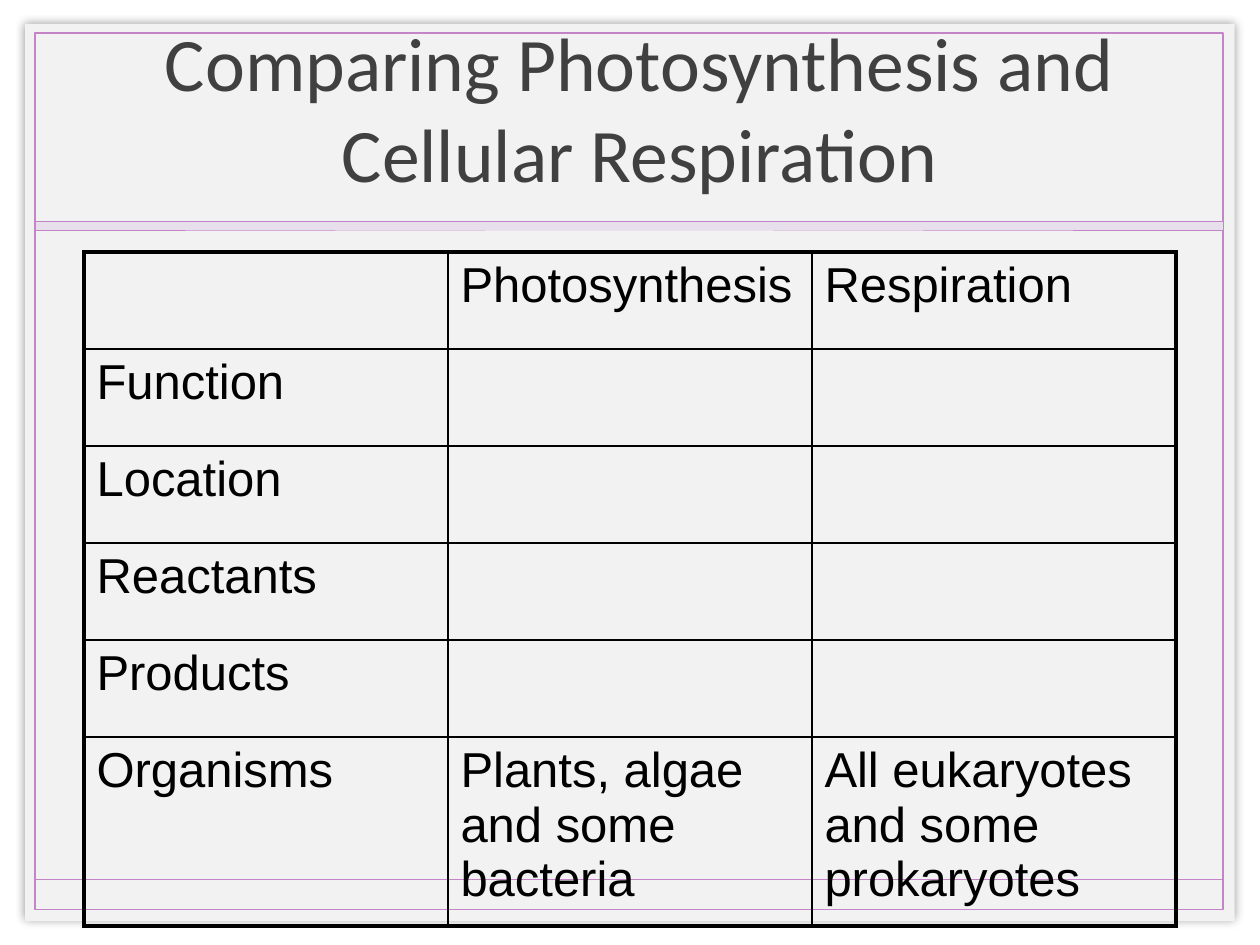
from lxml.etree import SubElement
from pptx import Presentation
from pptx.dml.color import RGBColor
from pptx.enum.shapes import MSO_CONNECTOR, MSO_SHAPE
from pptx.enum.text import MSO_ANCHOR, PP_ALIGN
from pptx.oxml import parse_xml
from pptx.oxml.ns import nsdecls, qn
from pptx.util import Pt

BLACK = RGBColor(0x00, 0x00, 0x00)
GREY = RGBColor(0x40, 0x40, 0x40)
PAPER = RGBColor(0xF2, 0xF2, 0xF2)
PURPLE = RGBColor(0xC3, 0x84, 0xC8)
LILAC = RGBColor(0xE7, 0xDF, 0xEB)

LEFT, WIDTH = 20.16, 678.96
COL_WIDTH = 208
ROW_HEIGHTS = [55.44] * 5 + [108]
ROWS = [
    ["", "Photosynthesis", "Respiration"],
    ["Function", "", ""],
    ["Location", "", ""],
    ["Reactants", "", ""],
    ["Products", "", ""],
    ["Organisms", "Plants, algae and some bacteria",
     "All eukaryotes and some prokaryotes"],
]


def write(tf, text, size, font, color, align=PP_ALIGN.LEFT, anchor=None):
    tf.word_wrap = True
    if anchor is not None:
        tf.vertical_anchor = anchor
    p = tf.paragraphs[0]
    p.alignment = align
    r = p.add_run()
    r.text = text
    r.font.size = Pt(size)
    r.font.name = font
    r.font.color.rgb = color


def add_rect(s, left, top, width, height, fill=None, line=None, weight=1):
    sp = s.shapes.add_shape(MSO_SHAPE.RECTANGLE,
                            Pt(left), Pt(top), Pt(width), Pt(height))
    sp.shadow.inherit = False
    if fill is None:
        sp.fill.background()
    else:
        sp.fill.solid()
        sp.fill.fore_color.rgb = fill
    if line is None:
        sp.line.fill.background()
    else:
        sp.line.color.rgb = line
        sp.line.width = Pt(weight)
    return sp


def add_glow_shadow(sp, blur, opacity):
    """Give the shape an even black shadow on all sides."""
    effects = sp._element.spPr.find(qn("a:effectLst"))
    effects.append(parse_xml(
        f'<a:outerShdw {nsdecls("a")} blurRad="{Pt(blur)}" dist="0" dir="0" '
        f'algn="ctr" rotWithShape="0"><a:srgbClr val="{BLACK}">'
        f'<a:alpha val="{opacity * 1000}"/></a:srgbClr></a:outerShdw>'))


def add_rule(s, x1, x2, y):
    line = s.shapes.add_connector(MSO_CONNECTOR.STRAIGHT,
                                  Pt(x1), Pt(y), Pt(x2), Pt(y))
    line.line.color.rgb = PURPLE
    line.line.width = Pt(1)
    SubElement(line._element.spPr, qn("a:effectLst"))


def set_borders(cell, weights):
    """Draw the cell's sides; weights are left, right, top, bottom."""
    tcPr = cell._tc.get_or_add_tcPr()
    for i, (side, weight) in enumerate(zip("LRTB", weights)):
        tcPr.insert(i, parse_xml(
            f'<a:ln{side} {nsdecls("a")} w="{Pt(weight)}"><a:solidFill>'
            f'<a:srgbClr val="{BLACK}"/></a:solidFill></a:ln{side}>'))


def add_comparison_table(s, left, top):
    n_rows, n_cols = len(ROWS), len(ROWS[0])
    table = s.shapes.add_table(n_rows, n_cols, Pt(left), Pt(top),
                               Pt(COL_WIDTH * n_cols),
                               Pt(sum(ROW_HEIGHTS))).table
    table.first_row = table.horz_banding = False
    for col in table.columns:
        col.width = Pt(COL_WIDTH)
    for i, (row, height) in enumerate(zip(ROWS, ROW_HEIGHTS)):
        table.rows[i].height = Pt(height)
        for j, text in enumerate(row):
            cell = table.cell(i, j)
            cell.fill.background()
            outer = [j == 0, j == n_cols - 1, i == 0, i == n_rows - 1]
            set_borders(cell, [2.25 if edge else 1 for edge in outer])
            if text:
                write(cell.text_frame, text, 28, "Arial", BLACK)


def add_title(s, text):
    box = s.shapes.add_textbox(Pt(25.2), Pt(4.32), Pt(680.4), Pt(113.04))
    write(box.text_frame, text, 43.2, "Calibri", GREY,
          align=PP_ALIGN.CENTER, anchor=MSO_ANCHOR.MIDDLE)


def main():
    prs = Presentation()
    prs.slide_width, prs.slide_height = Pt(720), Pt(540)
    s = prs.slides.add_slide(prs.slide_layouts[6])

    page = add_rect(s, 14.4, 13.68, 691.2, 512.64, fill=PAPER)
    add_glow_shadow(page, blur=5, opacity=40)
    add_rect(s, LEFT, 18.72, WIDTH, 501.12, line=PURPLE)
    add_rule(s, LEFT, LEFT + WIDTH, 502.56)
    add_rect(s, LEFT, 126.3, WIDTH, 5.04, fill=LILAC, line=PURPLE, weight=0.25)

    add_comparison_table(s, 48, 144)
    add_title(s, "Comparing Photosynthesis and Cellular Respiration")
    prs.save("out.pptx")


if __name__ == "__main__":
    main()
